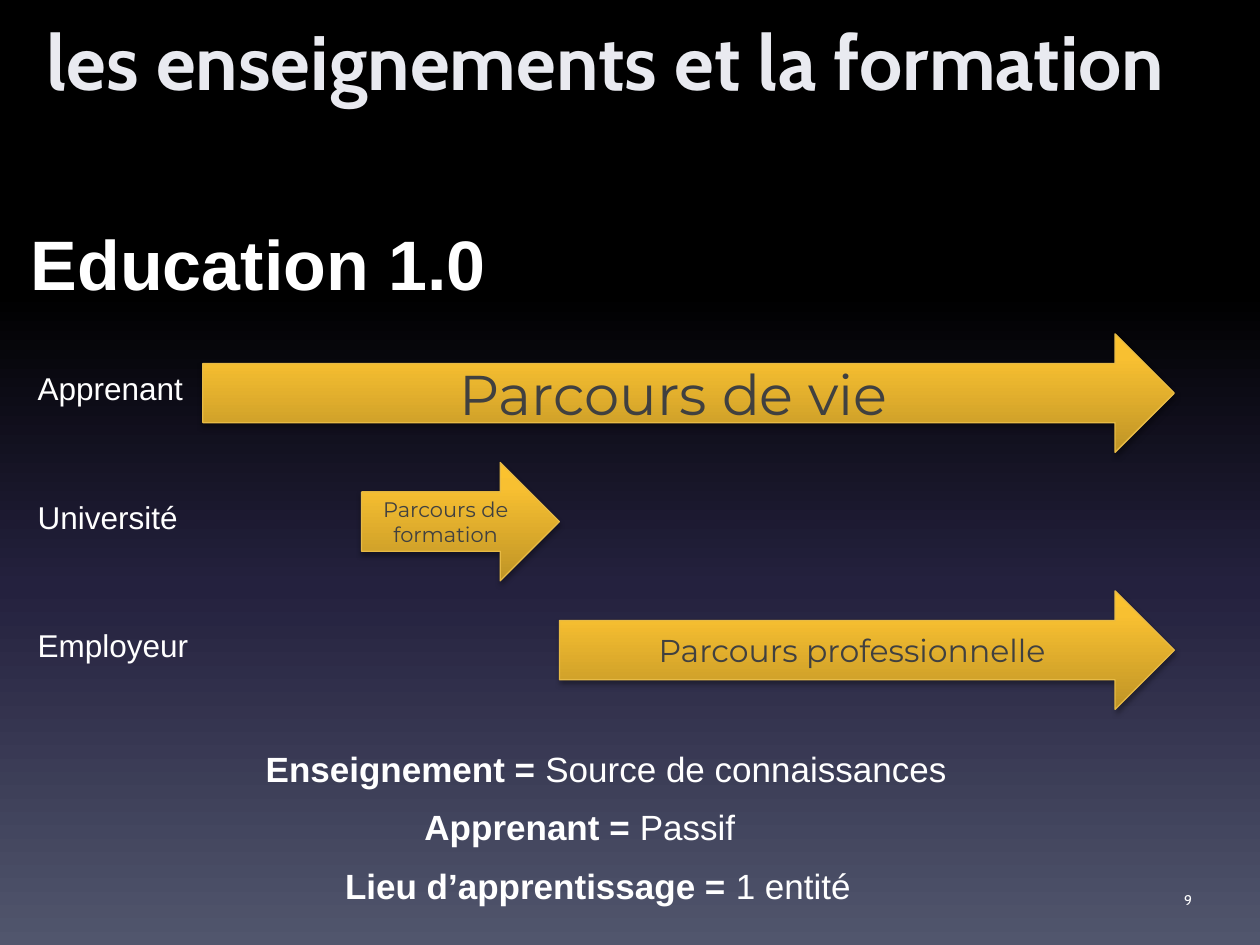
import pptx
import pptx.dml.color
import pptx.enum.shapes
import pptx.enum.text
import pptx.oxml
import pptx.oxml.ns
import pptx.util
from lxml import etree

ALIGN = pptx.enum.text.PP_ALIGN
ANCHOR = pptx.enum.text.MSO_ANCHOR
AUTO_SIZE = pptx.enum.text.MSO_AUTO_SIZE
CELL = 0.1  # inches; the slide is 100 columns by 75 rows


def color(hex_string):
    return pptx.dml.color.RGBColor.from_string(hex_string)


def grid(*counts):
    """Turn counts of columns or rows into lengths."""
    return [pptx.util.Inches(count * CELL) for count in counts]


def add_xml(parent, tag, **attributes):
    values = {name: str(value) for name, value in attributes.items()}
    return etree.SubElement(parent, pptx.oxml.ns.qn(tag), values)


def set_gradient(fill, element, stops, angle):
    """Fill with (percent, colour) stops; the angle runs clockwise."""
    fill.gradient()
    gradient = element.find(".//" + pptx.oxml.ns.qn("a:gradFill"))
    stop_list = gradient.find(pptx.oxml.ns.qn("a:gsLst"))
    for stop in list(stop_list):
        stop_list.remove(stop)
    for percent, hex_string in stops:
        stop = add_xml(stop_list, "a:gs", pos=percent * 1000)
        add_xml(stop, "a:srgbClr", val=hex_string)
    gradient.find(pptx.oxml.ns.qn("a:lin")).set("ang", str(angle * 60000))


class Deck:
    """Holds the style and the current slide."""

    text_color = "FFFFFF"
    title_color = "E9EAF0"
    arrow_text_color = "404040"
    arrow_line_color = "E7BA45"
    arrow_stops = [(0, "BF9426"), (80, "F8C031"), (100, "FDC32D")]
    background_stops = [(0, "000000"), (31, "000000"), (62, "24213E"), (100, "51566D")]
    body_font, title_font, arrow_font = "Arial", "Cabin", "Montserrat"

    def __init__(self):
        self.presentation = pptx.Presentation()
        self.presentation.slide_width, self.presentation.slide_height = grid(100, 75)
        self.slide = None

    def add_slide(self):
        self.slide = self.presentation.slides.add_slide(self.presentation.slide_layouts[6])
        set_gradient(self.slide.background.fill, self.slide.element, self.background_stops, 90)

    def style(self, paragraph, size, font, hex_string, align=ALIGN.LEFT):
        paragraph.alignment = align
        paragraph.font.size = pptx.util.Pt(size)
        paragraph.font.name = font
        paragraph.font.color.rgb = color(hex_string)

    def add_text(self, box, text, size, align=ALIGN.LEFT, bold=False, wrap=False,
                 font=body_font, hex_string=text_color, anchor=ANCHOR.TOP,
                 auto_size=AUTO_SIZE.SHAPE_TO_FIT_TEXT):
        frame = self.slide.shapes.add_textbox(*grid(*box)).text_frame
        frame.word_wrap = wrap
        frame.auto_size = auto_size
        frame.vertical_anchor = anchor
        paragraph = frame.paragraphs[0]
        paragraph.text = text
        self.style(paragraph, size, font, hex_string, align)
        paragraph.font.bold = bold
        return frame

    def add_title(self, box, text):
        frame = self.add_text(box, text, 44, ALIGN.CENTER, True, True, self.title_font,
                              self.title_color, ANCHOR.BOTTOM, AUTO_SIZE.NONE)
        frame.margin_left = frame.margin_right = frame.margin_bottom = 0

    def add_page_number(self, box, text):
        self.add_text(box, text, 8, ALIGN.RIGHT, wrap=True, font=self.title_font,
                      anchor=ANCHOR.MIDDLE, auto_size=AUTO_SIZE.NONE)

    def add_definition(self, box, term, meaning):
        """Add a bold term, an equals sign and its plain meaning."""
        paragraph = self.add_text(box, "", 20).paragraphs[0]
        for text, bold in ((f"{term} = ", True), (meaning, False)):
            run = paragraph.add_run()
            run.text = text
            run.font.bold = bold

    def add_arrow(self, box, text, size):
        arrow = self.slide.shapes.add_shape(
            pptx.enum.shapes.MSO_SHAPE.RIGHT_ARROW, *grid(*box))
        set_gradient(arrow.fill, arrow.element, self.arrow_stops, 270)
        arrow.line.color.rgb = color(self.arrow_line_color)
        arrow.line.width = pptx.util.Pt(0.75)
        self.add_shadow(arrow)
        arrow.text_frame.word_wrap = True
        arrow.text_frame.vertical_anchor = ANCHOR.MIDDLE
        paragraph = arrow.text_frame.paragraphs[0]
        paragraph.text = text
        self.style(paragraph, size, self.arrow_font, self.arrow_text_color, ALIGN.CENTER)

    def add_shadow(self, shape):
        shape.shadow.inherit = False
        effects = shape.element.spPr.find(pptx.oxml.ns.qn("a:effectLst"))
        shadow = add_xml(effects, "a:outerShdw", blurRad=pptx.util.Pt(3.1),
                         dist=pptx.util.Pt(1.8), dir=90 * 60000, rotWithShape=0)
        black = add_xml(shadow, "a:srgbClr", val="000000")
        add_xml(black, "a:alpha", val=35000)


def main():
    deck = Deck()
    deck.add_slide()
    deck.add_title((0, 2.1, 97.6, 6.3), "les enseignements et la formation ")
    deck.add_text((1.2, 17, 38.6, 7.7), "Education 1.0", 40, ALIGN.CENTER, True, True)

    actors = [
        ("Apprenant", 13.8, "Parcours de vie", 32, 16.1, 93.2),
        ("Université", 13.2, "Parcours de formation", 12, 28.7, 44.4),
        ("Employeur", 14.1, "Parcours professionnelle", 18, 44.4, 93.2),
    ]
    for index, (actor, width, path_text, size, start, end) in enumerate(actors):
        top = 26.5 + index * 10.2
        deck.add_text((2, top + 2.3, width, 4), actor, 18)
        deck.add_arrow((start, top, end - start, 9.4), path_text, size)

    definitions = [
        ("Enseignement", "Source de connaissances", 20.1, 56.5),
        ("Apprenant", "Passif", 32.7, 27.5),
        ("Lieu d’apprentissage", "1 entité", 26.4, 43.1),
    ]
    for index, (term, meaning, left, width) in enumerate(definitions):
        deck.add_definition((left, 58.8 + index * 4.65, width, 4.4), term, meaning)

    deck.add_page_number((76.3, 69.4, 19.3, 4), "9")
    deck.presentation.save("out.pptx")


if __name__ == "__main__":
    main()
